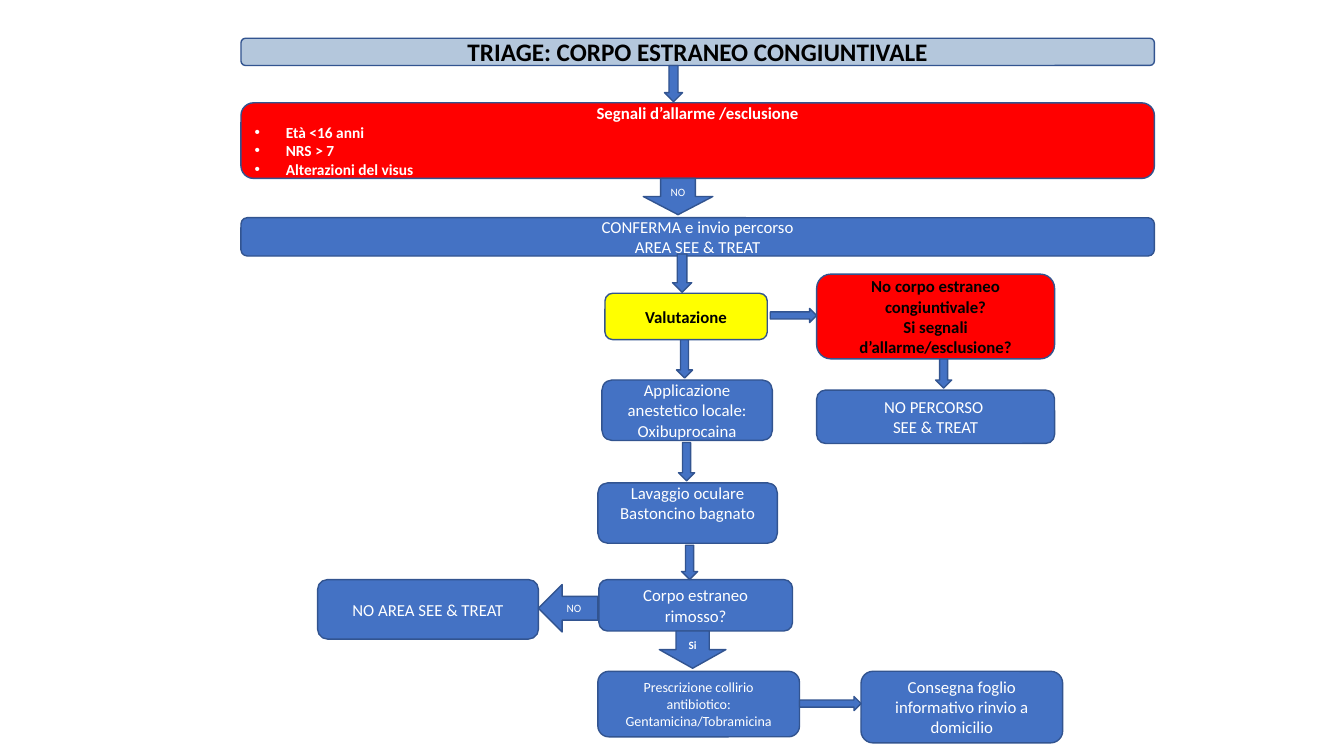
"""Build the triage flowchart for a conjunctival foreign body."""
from dataclasses import dataclass

from lxml.etree import SubElement
from pptx import Presentation
from pptx.dml.color import RGBColor
from pptx.enum.shapes import MSO_SHAPE
from pptx.enum.text import MSO_ANCHOR, PP_ALIGN
from pptx.oxml.ns import qn
from pptx.util import Inches, Pt


@dataclass(frozen=True)
class Theme:
    font: str = "Calibri"
    blue: str = "4472C4"
    outline: str = "325490"
    pale: str = "B4C7DC"
    red: str = "FF0000"
    yellow: str = "FFFF00"
    white: str = "FFFFFF"
    black: str = "000000"
    title: int = 18
    body: int = 12
    bullet: int = 11
    small: int = 10
    label: int = 8


THEME = Theme()
BANNER_LEFT, BANNER_WIDTH = 2.39, 9.06
SIDE_LEFT, SIDE_WIDTH = 8.1, 2.36
LAST_ROW, LAST_WIDTH = 6.66, 2

ALARM_SIGNS = ["Età <16 anni", "NRS > 7", "Alterazioni del visus"]

BOXES = [
    ((BANNER_LEFT, 0.38, BANNER_WIDTH, 0.27), ["TRIAGE: CORPO ESTRANEO CONGIUNTIVALE"],
     dict(fill=THEME.pale, color=THEME.black, size=THEME.title, bold=True)),
    ((BANNER_LEFT, 1.02, BANNER_WIDTH, 0.75), ["Segnali d’allarme /esclusione"],
     dict(fill=THEME.red, bold=True, bullets=ALARM_SIGNS)),
    ((BANNER_LEFT, 2.16, BANNER_WIDTH, 0.38),
     ["CONFERMA e invio percorso", "AREA SEE & TREAT"], {}),
    ((6, 2.91, 1.61, 0.46), ["Valutazione"],
     dict(fill=THEME.yellow, color=THEME.black, bold=True)),
    ((SIDE_LEFT, 2.72, SIDE_WIDTH, 0.84),
     ["No corpo estraneo congiuntivale?", "Si segnali d’allarme/esclusione?"],
     dict(fill=THEME.red, color=THEME.black, bold=True)),
    ((SIDE_LEFT, 3.87, SIDE_WIDTH, 0.53), ["NO PERCORSO ", "SEE & TREAT"], {}),
    ((5.97, 3.77, 1.69, 0.6), ["Applicazione anestetico locale: Oxibuprocaina"], {}),
    ((5.93, 4.79, 1.78, 0.6), ["Lavaggio oculare Bastoncino bagnato"],
     dict(bottom_inset=0.25)),
    ((5.94, 5.75, 1.92, 0.51), ["Corpo estraneo rimosso?"], {}),
    ((3.15, 5.75, 2.19, 0.59), ["NO AREA SEE & TREAT"], {}),
    ((5.93, LAST_ROW, LAST_WIDTH, 0.65),
     ["Prescrizione collirio antibiotico: Gentamicina/Tobramicina"], dict(size=THEME.small)),
    ((8.54, LAST_ROW, LAST_WIDTH, 0.71),
     ["Consegna foglio informativo rinvio a domicilio"], {}),
]

DOWN, LEFT, RIGHT = MSO_SHAPE.DOWN_ARROW, MSO_SHAPE.LEFT_ARROW, MSO_SHAPE.RIGHT_ARROW
ARROWS = [
    (DOWN, (6.59, 0.65, 0.18, 0.36), [], {}),
    (DOWN, (6.38, 1.77, 0.69, 0.36), ["NO"], {}),
    (DOWN, (6.67, 2.52, 0.19, 0.38), [], {}),
    (RIGHT, (7.64, 3.06, 0.46, 0.14), [], {}),
    (DOWN, (9.28, 3.56, 0.16, 0.29), [], {}),
    (DOWN, (6.71, 3.37, 0.16, 0.38), [], {}),
    (DOWN, (6.73, 4.39, 0.16, 0.38), [], {}),
    (DOWN, (6.76, 5.41, 0.16, 0.34), [], {}),
    (DOWN, (6.54, 6.26, 0.66, 0.37), ["Si"], dict(bold=True)),
    (LEFT, (5.34, 5.8, 0.59, 0.47), ["NO"], {}),
    (RIGHT, (7.93, 6.91, 0.61, 0.14), [], {}),
]


def write_paragraph(paragraph, text, *, size, color, bold, bullet=False):
    paragraph.alignment = PP_ALIGN.JUSTIFY if bullet else PP_ALIGN.CENTER
    if bullet:
        properties = paragraph._p.get_or_add_pPr()
        indent = Inches(0.31)
        properties.set("marL", str(indent))
        properties.set("indent", str(-indent))
        SubElement(properties, qn("a:buFont"), typeface="Arial")
        SubElement(properties, qn("a:buChar"), char="•")
    run = paragraph.add_run()
    run.text = text
    run.font.name = THEME.font
    run.font.size = Pt(size)
    run.font.bold = bold
    run.font.color.rgb = RGBColor.from_string(color)


def add_step(slide, kind, place, lines, *, fill=THEME.blue, color=THEME.white,
             size=THEME.body, bold=False, bullets=(), bottom_inset=0.05):
    shape = slide.shapes.add_shape(kind, *map(Inches, place))
    shape.shadow.inherit = False
    shape.fill.solid()
    shape.fill.fore_color.rgb = RGBColor.from_string(fill)
    shape.line.color.rgb = RGBColor.from_string(THEME.outline)
    shape.line.width = Pt(1)
    frame = shape.text_frame
    frame.word_wrap = True
    frame.vertical_anchor = MSO_ANCHOR.MIDDLE
    frame.margin_bottom = Inches(bottom_inset)
    entries = [(line, size, False) for line in lines]
    entries += [(line, THEME.bullet, True) for line in bullets]
    for index, (text, points, bullet) in enumerate(entries):
        paragraph = frame.add_paragraph() if index else frame.paragraphs[0]
        write_paragraph(paragraph, text, size=points, color=color, bold=bold, bullet=bullet)


def main():
    presentation = Presentation()
    presentation.slide_width, presentation.slide_height = Inches(13.33), Inches(7.5)
    slide = presentation.slides.add_slide(presentation.slide_layouts[6])
    for place, lines, style in BOXES:
        add_step(slide, MSO_SHAPE.ROUNDED_RECTANGLE, place, lines, **style)
    for kind, place, lines, style in ARROWS:
        add_step(slide, kind, place, lines, size=THEME.label, **style)
    presentation.save("out.pptx")


if __name__ == "__main__":
    main()
